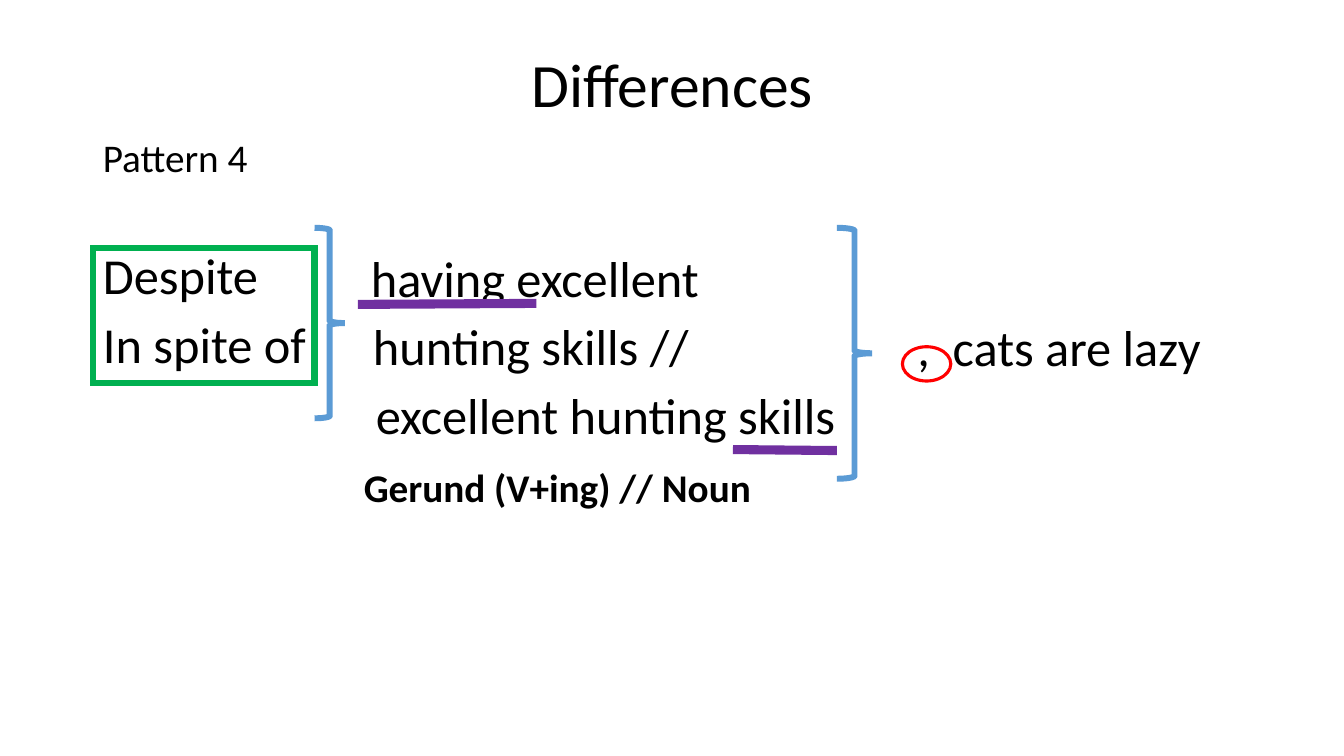
"""Build the "Differences" grammar slide showing pattern 4."""
from dataclasses import dataclass

from lxml import etree
from pptx import Presentation
from pptx.dml.color import RGBColor
from pptx.enum.shapes import MSO_CONNECTOR, MSO_SHAPE
from pptx.enum.text import MSO_ANCHOR, MSO_AUTO_SIZE, PP_ALIGN
from pptx.oxml.ns import qn
from pptx.util import Inches, Pt

BRACE, OVAL, RECT = MSO_SHAPE.RIGHT_BRACE, MSO_SHAPE.OVAL, MSO_SHAPE.RECTANGLE
STRAIGHT = MSO_CONNECTOR.STRAIGHT
CENTER, LEFT = PP_ALIGN.CENTER, PP_ALIGN.LEFT
MIDDLE, TOP = MSO_ANCHOR.MIDDLE, MSO_ANCHOR.TOP
NO_FIT = MSO_AUTO_SIZE.NONE

Box = tuple[float, float, float, float]


@dataclass(frozen=True)
class Theme:
    font: str = "Calibri"
    text: str = "000000"
    brace: str = "5B9BD5"
    comma: str = "FF0000"
    linker: str = "00B050"
    underline: str = "7030A0"
    title_size: int = 44
    example_size: int = 36
    label_size: int = 28
    line_spacing: float = 0.9


@dataclass(frozen=True)
class Line:
    text: str
    size: int
    before: float = 10
    bold: bool = False
    indent: float = 0


@dataclass(frozen=True)
class Column:
    box: Box
    lines: tuple[Line, ...]


@dataclass(frozen=True)
class Mark:
    kind: int
    box: Box
    color: str
    width: float


@dataclass(frozen=True)
class Underline:
    start: tuple[float, float]
    end: tuple[float, float]


THEME = Theme()
TITLE = Column((0.92, 0.4, 11.5, 0.93), (Line("Differences", THEME.title_size, 0),))
LINKERS = Column((0.92, 1.33, 11.5, 5.43), (
    Line("Pattern 4", THEME.label_size, 0),
    Line("Despite", THEME.example_size, 50),
    Line("In spite of", THEME.example_size),
))
COLUMNS = (
    Column((3.51, 2.47, 5.1, 2.8), (
        Line("having excellent", THEME.example_size, 0, indent=0.07),
        Line("hunting skills //", THEME.example_size, indent=0.09),
        Line("excellent hunting skills", THEME.example_size, indent=0.12),
        Line("Gerund (V+ing) // Noun", THEME.label_size, 17, bold=True),
    )),
    Column((9, 3.16, 3.42, 0.7), (Line(",  cats are lazy", THEME.example_size, 0),)),
)
MARKS = (
    Mark(BRACE, (3.12, 2.26, 0.3, 1.89), THEME.brace, 4.25),
    Mark(BRACE, (8.3, 2.26, 0.35, 2.49), THEME.brace, 4.25),
    Mark(OVAL, (8.95, 3.44, 0.48, 0.34), THEME.comma, 2.25),
    Mark(RECT, (0.92, 2.46, 2.2, 1.34), THEME.linker, 4.5),
)
UNDERLINES = (
    Underline((3.55, 3.02), (5.32, 3.01)),
    Underline((7.27, 4.46), (8.3, 4.47)),
)


def fill_text(sp, column: Column, align=LEFT, anchor=TOP) -> None:
    sp.left, sp.top, sp.width, sp.height = map(Inches, column.box)
    tf = sp.text_frame
    tf.text = "\n".join(line.text for line in column.lines)
    tf.word_wrap = True
    tf.auto_size = NO_FIT
    tf.vertical_anchor = anchor
    for p, line in zip(tf.paragraphs, column.lines):
        p.alignment = align
        p.line_spacing = THEME.line_spacing
        p.space_before = Pt(line.before)
        set_indent(p, line.indent)
        for r in p.runs:
            r.font.name = THEME.font
            r.font.size = Pt(line.size)
            r.font.bold = line.bold
            r.font.color.rgb = RGBColor.from_string(THEME.text)


def set_indent(p, indent: float) -> None:
    props = p._p.get_or_add_pPr()
    props.set("marL", str(Inches(indent)))
    props.set("indent", "0")
    etree.SubElement(props, qn("a:buNone"))


def style_line(sp, color: str, width: float) -> None:
    sp.line.color.rgb = RGBColor.from_string(color)
    sp.line.width = Pt(width)
    etree.SubElement(sp._element.spPr.find(qn("a:ln")), qn("a:miter"), lim="800000")


def draw_mark(s, mark: Mark) -> None:
    sp = s.shapes.add_shape(mark.kind, *map(Inches, mark.box))
    sp.shadow.inherit = False
    sp.fill.background()
    style_line(sp, mark.color, mark.width)


def draw_underline(s, underline: Underline) -> None:
    sp = s.shapes.add_connector(STRAIGHT, *map(Inches, underline.start + underline.end))
    style_line(sp, THEME.underline, 6.5)
    etree.SubElement(sp._element.spPr, qn("a:effectLst"))


def main() -> None:
    prs = Presentation()
    prs.slide_width, prs.slide_height = Inches(13.33), Inches(7.5)
    s = prs.slides.add_slide(prs.slide_layouts[1])
    fill_text(s.shapes.title, TITLE, CENTER, MIDDLE)
    fill_text(s.placeholders[1], LINKERS)
    for column in COLUMNS:
        fill_text(s.shapes.add_textbox(*map(Inches, column.box)), column)
    for mark in MARKS:
        draw_mark(s, mark)
    for underline in UNDERLINES:
        draw_underline(s, underline)
    prs.save("out.pptx")


if __name__ == "__main__":
    main()
